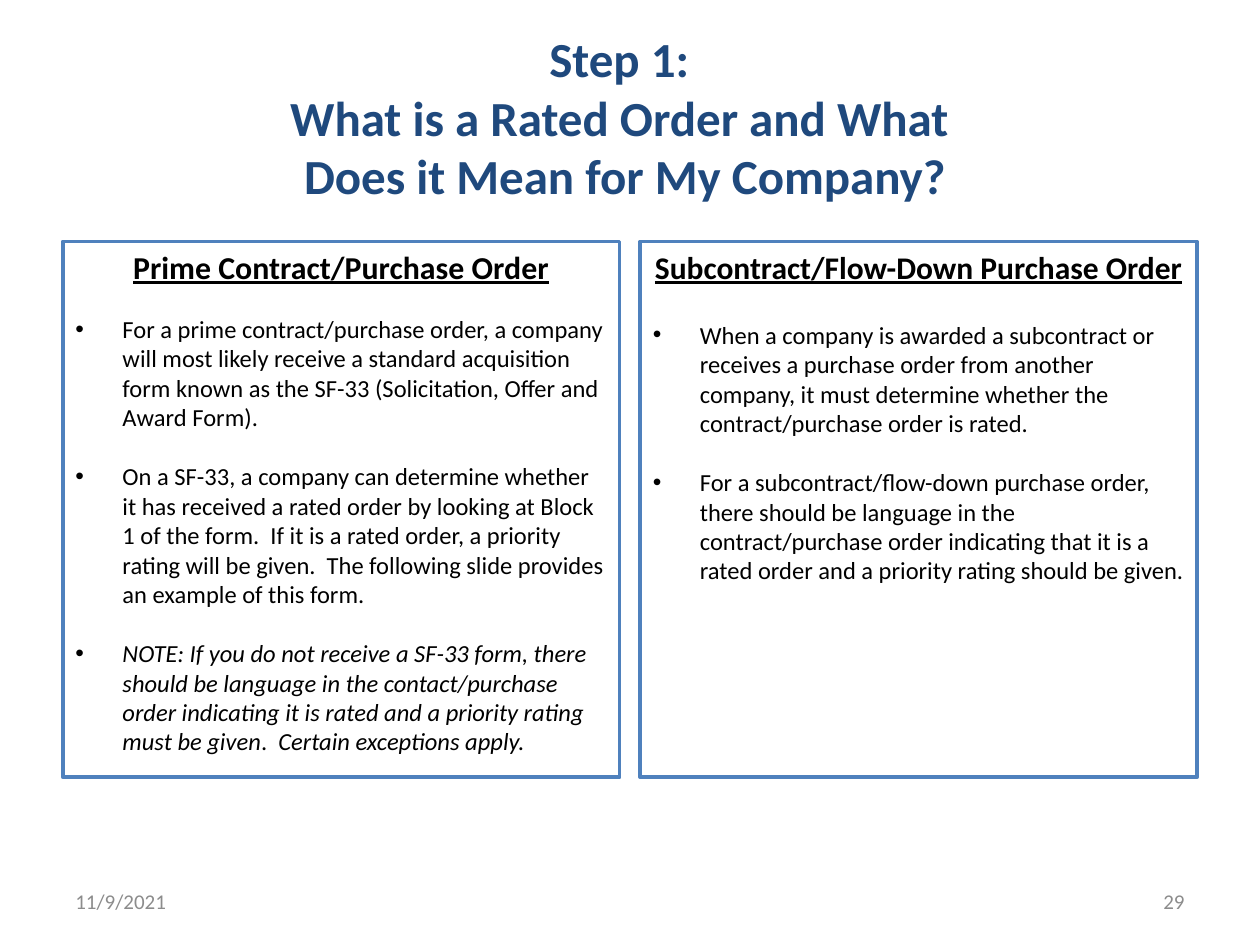
import dataclasses

import lxml.etree
import pptx
import pptx.dml.color
import pptx.enum.shapes
import pptx.enum.text
import pptx.oxml.ns
import pptx.util
from pptx.util import Cm

ALIGN = pptx.enum.text.PP_ALIGN
ANCHOR = pptx.enum.text.MSO_ANCHOR


@dataclasses.dataclass(frozen=True)
class Theme:
    font: str = "Calibri"
    title_color: str = "1F497D"
    text_color: str = "000000"
    footer_color: str = "8C8C8C"
    border_color: str = "4F81BD"
    panel_color: str = "FFFFFF"
    title_size: float = 28
    bullet_size: float = 14
    footer_size: float = 12
    border_width: float = 2.25


def rgb(color):
    return pptx.dml.color.RGBColor.from_string(color)


class SlideBuilder:
    def __init__(self, slide, theme):
        self.slide = slide
        self.theme = theme

    def style(self, paragraph, size, color, bold=False, underline=False):
        for run in paragraph.runs:
            run.font.name = self.theme.font
            run.font.size = pptx.util.Pt(size)
            run.font.color.rgb = rgb(color)
            run.font.bold = bold
            run.font.underline = underline

    def text(self, text, left, top, width, height, size, color, align, bold=False):
        shape = self.slide.shapes.add_textbox(left, top, width, height)
        frame = shape.text_frame
        frame.word_wrap = True
        frame.vertical_anchor = ANCHOR.MIDDLE
        frame.text = text
        paragraph = frame.paragraphs[0]
        paragraph.alignment = align
        self.style(paragraph, size, color, bold)

    def title(self, lines):
        self.text("\v".join(lines), Cm(5.08), Cm(0.76), Cm(15.03), Cm(3.18),
                  self.theme.title_size, self.theme.title_color, ALIGN.CENTER, True)

    def footer(self, text, left, align):
        self.text(text, left, Cm(17.65), Cm(5.93), Cm(1.02),
                  self.theme.footer_size, self.theme.footer_color, align)

    def bullet(self, frame, pieces, gap):
        paragraph = frame.add_paragraph()
        paragraph.alignment = ALIGN.LEFT
        paragraph.space_before = pptx.util.Pt(gap)
        properties = paragraph._p.get_or_add_pPr()
        properties.set("marL", str(Cm(0.95)))
        properties.set("indent", str(-Cm(0.95)))
        for tag, name, value in (("a:buFont", "typeface", "Arial"), ("a:buChar", "char", "•")):
            element = lxml.etree.SubElement(properties, pptx.oxml.ns.qn(tag))
            element.set(name, value)
        for text, italic in pieces:
            run = paragraph.add_run()
            run.text = text
            run.font.italic = italic
        self.style(paragraph, self.theme.bullet_size, self.theme.text_color)

    def panel(self, left, heading, heading_size, first_gap, bullets):
        shape = self.slide.shapes.add_shape(
            pptx.enum.shapes.MSO_SHAPE.RECTANGLE, left, Cm(4.87), Cm(11.22), Cm(10.8))
        shape.shadow.inherit = False
        shape.fill.solid()
        shape.fill.fore_color.rgb = rgb(self.theme.panel_color)
        shape.line.color.rgb = rgb(self.theme.border_color)
        shape.line.width = pptx.util.Pt(self.theme.border_width)
        frame = shape.text_frame
        frame.word_wrap = True
        frame.vertical_anchor = ANCHOR.TOP
        frame.text = heading
        paragraph = frame.paragraphs[0]
        paragraph.alignment = ALIGN.CENTER
        self.style(paragraph, heading_size, self.theme.text_color, True, True)
        for index, pieces in enumerate(bullets):
            self.bullet(frame, pieces, 17 if index else first_gap)


def main():
    presentation = pptx.Presentation()
    presentation.slide_width = Cm(25.4)
    presentation.slide_height = Cm(19.05)
    slide = presentation.slides.add_slide(presentation.slide_layouts[6])
    builder = SlideBuilder(slide, Theme())

    builder.title(["Step 1: ", "What is a Rated Order and What ", "Does it Mean for My Company?"])
    builder.panel(Cm(1.27), "Prime Contract/Purchase Order", 18.2, 16, [
        [("For a prime contract/purchase order, a company will most likely receive a standard "
          "acquisition form known as the SF-33 (Solicitation, Offer and Award Form).", False)],
        [("On a SF-33, a company can determine whether it has received a rated order by looking "
          "at Block 1 of the form.  If it is a rated order, a priority rating will be given.  "
          "The following slide provides an example of this form.", False)],
        [("NOTE: If you do not receive a SF-33 form, there should be language in the "
          "contact/purchase order indicating it is rated and a priority rating must be given", True),
         (". ", False),
         (" Certain exceptions apply.", True)],
    ])
    builder.panel(Cm(12.91), "Subcontract/Flow-Down Purchase Order", 18, 19.5, [
        [("When a company is awarded a subcontract or receives a purchase order from another "
          "company, it must determine whether the contract/purchase order is rated.", False)],
        [("For a subcontract/flow-down purchase order, there should be language in the "
          "contract/purchase order indicating that it is a rated order and a priority rating "
          "should be given.", False)],
    ])
    builder.footer("11/9/2021", Cm(1.27), ALIGN.LEFT)
    builder.footer("29", Cm(18.2), ALIGN.RIGHT)
    presentation.save("out.pptx")


if __name__ == "__main__":
    main()
